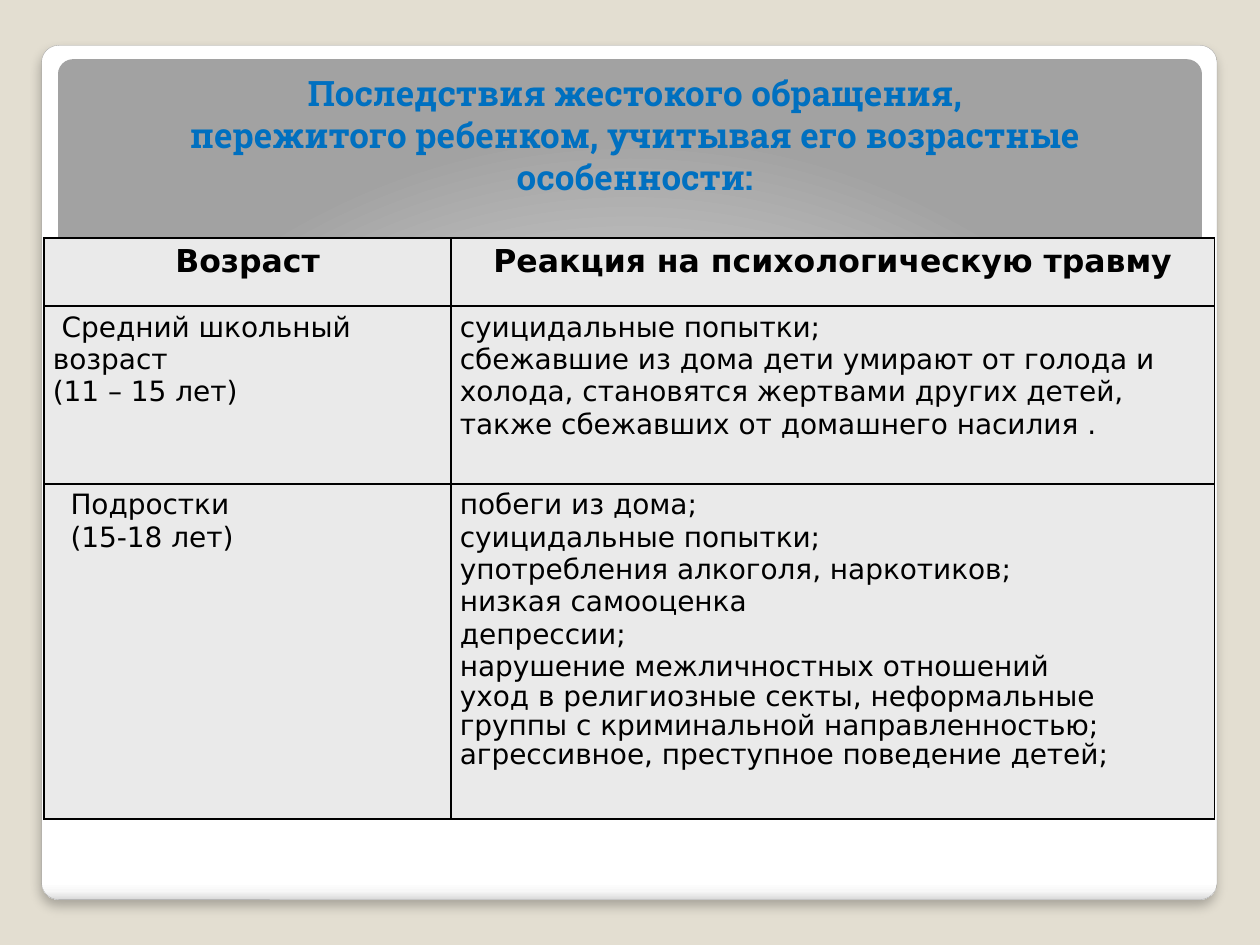
from dataclasses import dataclass

from lxml.etree import SubElement
from pptx import Presentation
from pptx.dml.color import RGBColor
from pptx.enum.shapes import MSO_SHAPE
from pptx.enum.text import MSO_ANCHOR, MSO_AUTO_SIZE, PP_ALIGN
from pptx.oxml import parse_xml
from pptx.oxml.ns import nsdecls, qn
from pptx.util import Inches, Pt


@dataclass(frozen=True)
class Theme:
    background: str = "E3DED1"
    card_line: str = "A4A4A4"
    title: str = "0070C0"
    ink: str = "000000"
    cell: str = "EAEAEA"
    title_font: str = "Roboto Slab"
    table_font: str = "DejaVu Sans"
    title_size: int = 20
    header_size: int = 18
    body_size: int = 16


THEME = Theme()

TITLE = [
    "Последствия жестокого обращения,",
    "пережитого ребенком, учитывая его возрастные особенности:",
]
HEADER = ["Возраст", "Реакция на психологическую травму"]

# Paragraph styles: left margin and first-line indent in inches, line spacing
PLAIN = (0, 0, None)
FIRST_LINE = (0, 0.07, None)
INSET = (0.14, 0, None)
HANGING = (0.67, -0.67, None)
TIGHT = (0, 0, 0.9)

AGE_GROUPS = [
    (
        [("Средний школьный\u00a0возраст".replace("\u00a0", " "), FIRST_LINE),
         ("(11 – 15 лет)", PLAIN)],
        [("суицидальные попытки;", PLAIN),
         ("сбежавшие из дома дети умирают от голода и холода, становятся "
          "жертвами других детей, также сбежавших от домашнего насилия .", PLAIN)],
    ),
    (
        [("Подростки", INSET), ("(15-18 лет)", INSET)],
        [("побеги из дома;", HANGING),
         ("суицидальные попытки;", HANGING),
         ("употребления алкоголя, наркотиков;", HANGING),
         ("низкая самооценка", HANGING),
         ("депрессии;", HANGING),
         ("нарушение межличностных отношений", HANGING),
         ("уход в религиозные секты, неформальные группы "
          "с криминальной направленностью;", TIGHT),
         ("агрессивное, преступное поведение детей;", TIGHT)],
    ),
]

CARD_BOX = (0.33, 0.36, 9.33, 6.78)
PANEL_BOX = (0.46, 0.47, 9.08, 6)
TITLE_BOX = (0.51, 0.52, 9.06, 1.11)
TABLE_AT = (0.35, 1.89)
COLUMN_WIDTHS = [3.23, 6.06]
ROW_HEIGHTS = [0.54, 1.41, 2.66]

CARD_STOPS = [(0, "FFFFFF"), (98, "FFFFFF"), (99, "F7F7F7"), (100, "DADADA")]
PANEL_STOPS = [(0, "FFFFFF"), (55, "E1E1E1"), (100, "A2A2A2")]
DOWNWARD = '<a:lin ang="5400000" scaled="0"/>'
RADIAL = ('<a:path path="circle">'
          '<a:fillToRect l="50000" t="175000" r="50000" b="-75000"/></a:path>')


def rgb(color):
    return RGBColor.from_string(color)


def format_runs(paragraph, font, size, color, bold):
    for run in paragraph.runs:
        run.font.name, run.font.size, run.font.bold = font, Pt(size), bold
        run.font.color.rgb = rgb(color)


def add_rounded(slide, box, stops, direction):
    shape = slide.shapes.add_shape(MSO_SHAPE.ROUNDED_RECTANGLE, *map(Inches, box))
    shape.adjustments[0] = 0.02
    shape.shadow.inherit = False
    shape.line.fill.background()
    shape.fill.gradient()
    gradient = shape.element.spPr.find(qn("a:gradFill"))
    stop_xml = "".join(f'<a:gs pos="{pos * 1000}"><a:srgbClr val="{color}"/></a:gs>'
                       for pos, color in stops)
    gradient.getparent().replace(gradient, parse_xml(
        f'<a:gradFill {nsdecls("a")} rotWithShape="1"><a:gsLst>{stop_xml}</a:gsLst>'
        f'{direction}</a:gradFill>'))
    return shape


def add_card(slide):
    card = add_rounded(slide, CARD_BOX, CARD_STOPS, DOWNWARD)
    card.line.color.rgb = rgb(THEME.card_line)
    card.line.width = Pt(0.16)
    card.element.spPr.find(qn("a:effectLst")).append(parse_xml(
        f'<a:outerShdw {nsdecls("a")} blurRad="{Pt(6)}" dist="{Pt(4)}" dir="5400000" '
        f'algn="tl" rotWithShape="0"><a:srgbClr val="{THEME.ink}">'
        f'<a:alpha val="25000"/></a:srgbClr></a:outerShdw>'))


def place_title(slide):
    title = slide.shapes.title
    title.element.getparent().append(title.element)  # in front of the panels
    title.left, title.top, title.width, title.height = map(Inches, TITLE_BOX)
    frame = title.text_frame
    frame.text = "\n".join(TITLE)
    frame.word_wrap = True
    frame.auto_size = MSO_AUTO_SIZE.NONE
    frame.vertical_anchor = MSO_ANCHOR.TOP
    for paragraph in frame.paragraphs:
        paragraph.alignment = PP_ALIGN.CENTER
        format_runs(paragraph, THEME.title_font, THEME.title_size, THEME.title, True)


def style_cell(cell):
    cell.margin_left = cell.margin_right = Inches(0.07)
    cell.margin_top = cell.margin_bottom = Inches(0.04)
    cell.fill.solid()
    cell.fill.fore_color.rgb = rgb(THEME.cell)
    properties = cell._tc.get_or_add_tcPr()
    for position, side in enumerate(("lnL", "lnR", "lnT", "lnB")):
        border = SubElement(properties, qn(f"a:{side}"), w=str(Pt(1)))
        SubElement(SubElement(border, qn("a:solidFill")), qn("a:srgbClr"), val=THEME.ink)
        properties.insert(position, border)


def fill_body_cell(cell, items):
    cell.text_frame.text = "\n".join(text for text, _ in items)
    for paragraph, (_, (margin, indent, spacing)) in zip(cell.text_frame.paragraphs, items):
        properties = paragraph._p.get_or_add_pPr()
        properties.set("marL", str(Inches(margin)))
        properties.set("indent", str(Inches(indent)))
        paragraph.line_spacing = spacing
        format_runs(paragraph, THEME.table_font, THEME.body_size, THEME.ink, False)


def add_reactions(slide):
    size = (sum(COLUMN_WIDTHS), sum(ROW_HEIGHTS))
    table = slide.shapes.add_table(len(ROW_HEIGHTS), len(COLUMN_WIDTHS),
                                   *map(Inches, TABLE_AT + size)).table
    table.horz_banding = False
    for column, width in zip(table.columns, COLUMN_WIDTHS):
        column.width = Inches(width)
    for row, height in zip(table.rows, ROW_HEIGHTS):
        row.height = Inches(height)
    for cell in table.iter_cells():
        style_cell(cell)
    for cell, heading in zip(table.rows[0].cells, HEADER):
        cell.text_frame.text = heading
        paragraph = cell.text_frame.paragraphs[0]
        paragraph.alignment = PP_ALIGN.CENTER
        format_runs(paragraph, THEME.table_font, THEME.header_size, THEME.ink, True)
    for row_number, group in enumerate(AGE_GROUPS, start=1):
        for cell, items in zip(table.rows[row_number].cells, group):
            fill_body_cell(cell, items)


def main():
    deck = Presentation()
    deck.slide_width, deck.slide_height = Inches(10), Inches(7.5)
    slide = deck.slides.add_slide(deck.slide_layouts[5])
    slide.background.fill.solid()
    slide.background.fill.fore_color.rgb = rgb(THEME.background)
    add_card(slide)
    add_rounded(slide, PANEL_BOX, PANEL_STOPS, RADIAL)
    place_title(slide)
    add_reactions(slide)
    deck.save("out.pptx")


if __name__ == "__main__":
    main()
